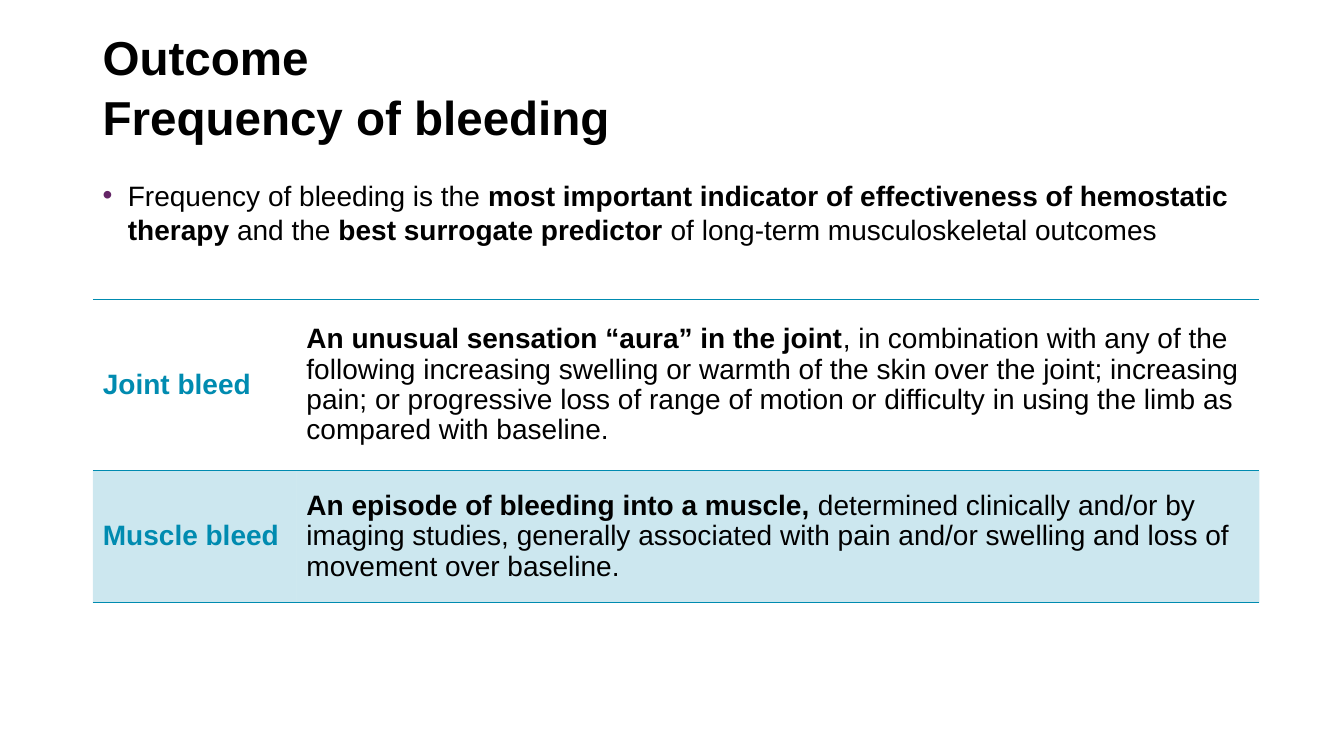
from lxml import etree
from pptx import Presentation
from pptx.dml.color import RGBColor
from pptx.enum.text import MSO_ANCHOR
from pptx.oxml.ns import qn
from pptx.util import Inches, Pt

MIDDLE = MSO_ANCHOR.MIDDLE
TOP = MSO_ANCHOR.TOP
BLACK = RGBColor(0x00, 0x00, 0x00)
TEAL = RGBColor(0x00, 0x8B, 0xB0)
PURPLE = RGBColor(0x64, 0x25, 0x66)
FONT = "Arial"
BODY_SIZE = 20
LEFT = 0.92
PLAIN_TABLE_STYLE = "{2D5ABB26-0587-4C30-8999-92F81FD0307C}"

TITLE_LINES = ["Outcome", "Frequency of bleeding"]
STATEMENT = [
    ("Frequency of bleeding is the ", False),
    ("most important indicator of effectiveness of hemostatic therapy", True),
    (" and the ", False),
    ("best surrogate predictor ", True),
    ("of long-term musculoskeletal outcomes", False),
]
DEFINITIONS = [
    ("Joint bleed", [
        ("An unusual sensation “aura” in the joint", True),
        (", in combination with any of the following increasing swelling or "
         "warmth of the skin over the joint; increasing pain; or progressive "
         "loss of range of motion or difficulty in using the limb as compared "
         "with baseline.", False),
    ]),
    ("Muscle bleed", [
        ("An episode of bleeding into a muscle, ", True),
        ("determined clinically and/or by imaging studies, generally "
         "associated with pain and/or swelling and loss of movement over "
         "baseline.", False),
    ]),
]
COLUMN_WIDTHS = [2.02, 9.55]
ROW_HEIGHTS = [1.7, 1.31]


def add_run(paragraph, text, bold, size=BODY_SIZE, color=BLACK):
    """Append one formatted run to a paragraph."""
    run = paragraph.add_run()
    run.text = text
    run.font.name = FONT
    run.font.size = Pt(size)
    run.font.bold = bold
    run.font.color.rgb = color


def add_text_frame(slide, top, height, anchor):
    """Add a wrapping text box across the content width."""
    box = slide.shapes.add_textbox(
        Inches(LEFT), Inches(top), Inches(11.5), Inches(height))
    frame = box.text_frame
    frame.word_wrap = True
    frame.vertical_anchor = anchor
    return frame


def add_title(slide):
    """Add the two-line heading."""
    heading = add_text_frame(slide, 0.25, 1.19, MIDDLE).paragraphs[0]
    heading.line_spacing = 1.04
    for index, line in enumerate(TITLE_LINES):
        if index:
            heading.add_line_break()
        add_run(heading, line, True, 34)


def set_bullet(paragraph):
    """Give a paragraph a purple bullet with a hanging indent."""
    properties = paragraph._p.get_or_add_pPr()
    properties.set("marL", str(Inches(0.25)))
    properties.set("indent", str(-Inches(0.25)))
    bullet_color = etree.SubElement(properties, qn("a:buClr"))
    etree.SubElement(bullet_color, qn("a:srgbClr"), val=str(PURPLE))
    etree.SubElement(properties, qn("a:buFont"), typeface=FONT)
    etree.SubElement(properties, qn("a:buChar"), char="•")


def add_statement(slide):
    """Add the bulleted key message."""
    message = add_text_frame(slide, 1.71, 0.99, TOP).paragraphs[0]
    set_bullet(message)
    message.line_spacing = 1.03
    for text, bold in STATEMENT:
        add_run(message, text, bold)


def add_border(cell, edge):
    """Draw a one-point teal line on one edge of a cell."""
    line = etree.SubElement(
        cell._tc.get_or_add_tcPr(), qn(f"a:{edge}"), w=str(Pt(1)))
    fill = etree.SubElement(line, qn("a:solidFill"))
    etree.SubElement(fill, qn("a:srgbClr"), val=str(TEAL))


def tint(cell):
    """Fill a cell with teal at 20 percent opacity."""
    cell.fill.solid()
    cell.fill.fore_color.rgb = TEAL
    color = cell._tc.tcPr.find(qn("a:solidFill")).find(qn("a:srgbClr"))
    etree.SubElement(color, qn("a:alpha"), val="20000")


def fill_cell(cell, runs, color, row):
    """Write a definition cell and style it for its row."""
    cell.vertical_anchor = MIDDLE
    paragraph = cell.text_frame.paragraphs[0]
    paragraph.line_spacing = 0.97
    for text, bold in runs:
        add_run(paragraph, text, bold, color=color)
    if row == 0:
        add_border(cell, "lnT")
    add_border(cell, "lnB")
    if row % 2:
        tint(cell)
    else:
        cell.fill.background()


def add_definitions(slide):
    """Add the table of bleed definitions."""
    frame = slide.shapes.add_table(
        len(DEFINITIONS), len(COLUMN_WIDTHS), Inches(LEFT), Inches(2.97),
        Inches(sum(COLUMN_WIDTHS)), Inches(sum(ROW_HEIGHTS)))
    table = frame.table
    table.first_row = False
    table.horz_banding = False
    table._tbl.tblPr.find(qn("a:tableStyleId")).text = PLAIN_TABLE_STYLE
    for column, width in zip(table.columns, COLUMN_WIDTHS):
        column.width = Inches(width)
    for row, (term, definition) in enumerate(DEFINITIONS):
        table.rows[row].height = Inches(ROW_HEIGHTS[row])
        fill_cell(table.cell(row, 0), [(term, True)], TEAL, row)
        fill_cell(table.cell(row, 1), definition, BLACK, row)


def main():
    """Build and save the slide."""
    presentation = Presentation()
    presentation.slide_width = Inches(13.33)
    presentation.slide_height = Inches(7.5)
    slide = presentation.slides.add_slide(presentation.slide_layouts[6])
    add_title(slide)
    add_statement(slide)
    add_definitions(slide)
    presentation.save("out.pptx")


if __name__ == "__main__":
    main()
